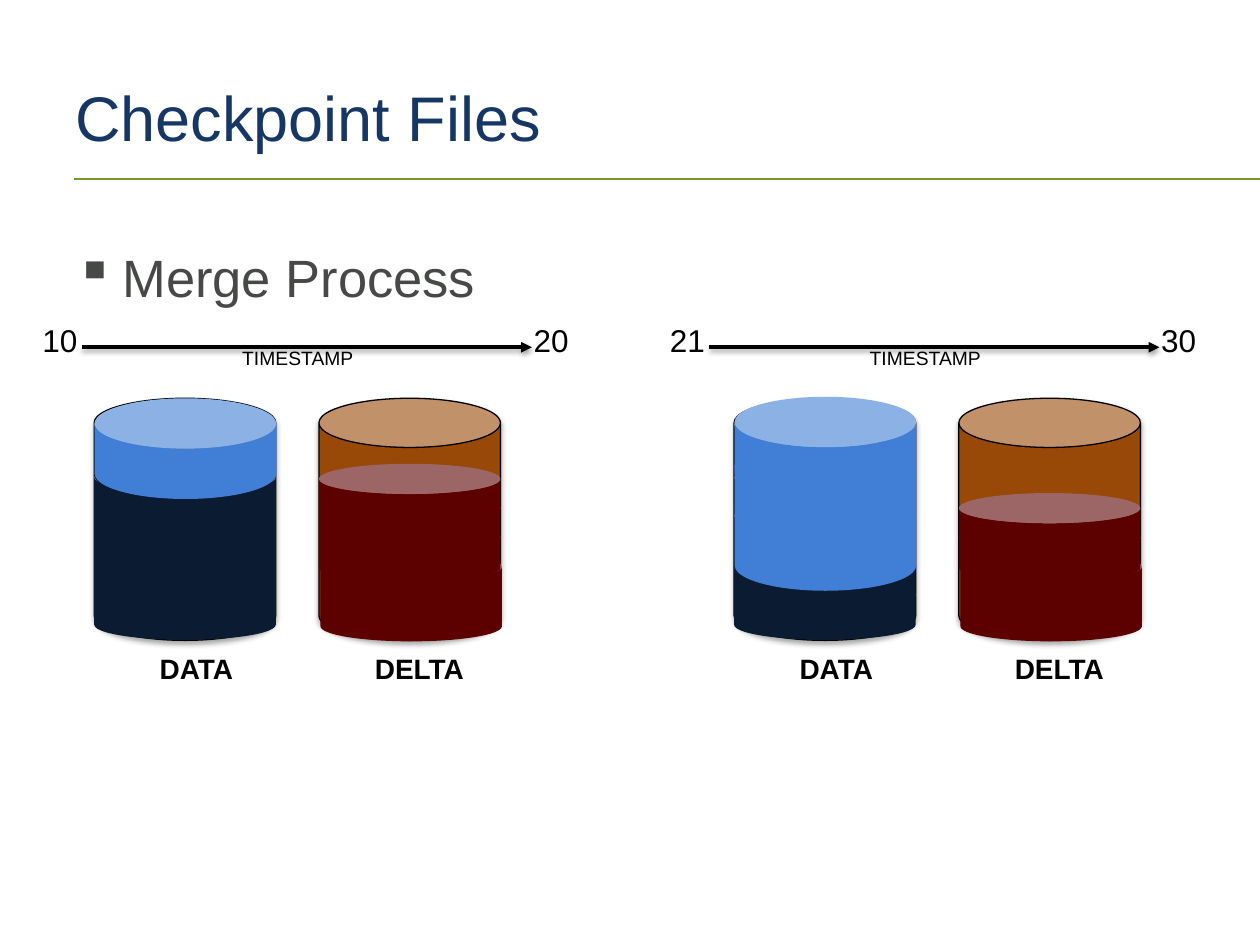
from dataclasses import dataclass

from lxml import etree
from pptx import Presentation
from pptx.dml.color import RGBColor
from pptx.enum.shapes import MSO_CONNECTOR, MSO_SHAPE
from pptx.enum.text import MSO_ANCHOR, MSO_AUTO_SIZE, PP_ALIGN
from pptx.oxml.ns import qn
from pptx.util import Cm, Pt

CAN = MSO_SHAPE.CAN
LINE = MSO_CONNECTOR.STRAIGHT
LEFT, CENTER = PP_ALIGN.LEFT, PP_ALIGN.CENTER
TOP, MIDDLE = MSO_ANCHOR.TOP, MSO_ANCHOR.MIDDLE
GROW, FIXED = MSO_AUTO_SIZE.SHAPE_TO_FIT_TEXT, MSO_AUTO_SIZE.NONE


@dataclass(frozen=True)
class Theme:
    font: str = "Arial"
    title: str = "163764"
    body: str = "474947"
    black: str = "000000"
    rule: str = "75982F"
    green: str = "587223"
    brown: str = "984807"
    navy: str = "0B1B32"
    red: str = "5C0000"
    blue: str = "407FD5"
    title_size: int = 36
    body_size: int = 30
    mark_size: int = 18
    label_size: int = 16
    axis_size: int = 11


theme = Theme()


def write(text, shapes, box, size, color=theme.black, bold=False, align=CENTER,
          anchor=TOP, inset=(0.61, 0.48), spacing=0.9, after=7.3, wrap=True,
          fit=GROW, bullet=None):
    """Add a text box; box and inset are in centimetres."""
    frame = shapes.add_textbox(*map(Cm, box)).text_frame
    frame.word_wrap = wrap
    frame.auto_size = fit
    frame.vertical_anchor = anchor
    frame.margin_left = frame.margin_right = Cm(inset[0])
    frame.margin_top = frame.margin_bottom = Cm(inset[1])
    par = frame.paragraphs[0]
    par.alignment = align
    par.line_spacing = spacing
    par.space_after = Pt(after)
    if bullet:
        props = par._p.get_or_add_pPr()
        props.set("marL", str(Cm(0.95)))
        props.set("indent", str(-Cm(0.95)))
        etree.SubElement(props, qn("a:buChar"), char=bullet)
    run = par.add_run()
    run.text = text
    run.font.name = theme.font
    run.font.size = Pt(size)
    run.font.bold = bold
    run.font.color.rgb = RGBColor.from_string(color)


def shade(item, alpha=0, dist=0):
    """Replace theme effects by a soft shadow below, or by none if alpha is 0."""
    effects = etree.SubElement(item._element.spPr, qn("a:effectLst"))
    if alpha:
        shadow = etree.SubElement(
            effects, qn("a:outerShdw"), blurRad=str(Pt(3.1)),
            dist=str(Pt(dist)), dir="5400000", rotWithShape="0")
        tint = etree.SubElement(shadow, qn("a:srgbClr"), val=theme.black)
        etree.SubElement(tint, qn("a:alpha"), val=str(alpha * 1000))


deck = Presentation()
deck.slide_width, deck.slide_height = Cm(25.4), Cm(19.05)
slide = deck.slides.add_slide(deck.slide_layouts[6])

# Heading
rule = slide.shapes.add_connector(LINE, Cm(1.5), Cm(3.61), Cm(25.4), Cm(3.61))
rule.line.color.rgb = RGBColor.from_string(theme.rule)
rule.line.width = Pt(1)
shade(rule)
plain = dict(align=LEFT, inset=(0.25, 0.13), after=0, fit=FIXED)
write("Checkpoint Files", slide.shapes, (1.27, 0.76, 22.86, 3.18),
      theme.title_size, theme.title, anchor=MIDDLE, spacing=1, **plain)
write("Merge Process", slide.shapes, (1.27, 4.55, 22.86, 12.5),
      theme.body_size, theme.body, spacing=1.2, bullet="▪", **plain)

# File pairs: range start and end, offsets of cans and axis,
# count of delta slices, tops of the blue slices
pairs = [
    ("10", "20", 0, 0, 5, [8.03]),
    ("21", "30", 12.9, 12.65, 4, [9.88, 8.89, 8.0]),
]
step, thin, thick = 0.59, 1.22, 2.03
for start, end, shift, slide_x, count, blues in pairs:
    group = slide.shapes.add_group_shape().shapes
    data, delta = 1.9 + shift, 6.43 + shift

    # Each can: left, top, height, curve, fill, outlined
    shells = [(data, 8.03, 4.88, 0.271, theme.green, True),
              (delta, 8.03, 4.88, 0.271, theme.brown, True)]
    slices = [(data, 11.68 - step * i, thin, 0.5, theme.navy, False)
              for i in range(5)]
    slices.append((data, 8.05, thick, 0.5, theme.navy, False))
    slices += [(delta + (0.03 if i < 2 else 0), 11.71 - step * i, thin, 0.5,
                theme.red, False) for i in range(count)]
    slices += [(data + 0.01, top, thick, 0.5, theme.blue, False)
               for top in blues]
    for left, top, high, curve, fill, outlined in shells + slices:
        can = group.add_shape(CAN, Cm(left), Cm(top), Cm(3.66), Cm(high))
        can.adjustments[0] = curve
        can.fill.solid()
        can.fill.fore_color.rgb = RGBColor.from_string(fill)
        if outlined:
            can.line.color.rgb = RGBColor.from_string(theme.black)
            can.line.width = Pt(0.75)
            shade(can, 35, 1.8)
        else:
            can.line.fill.background()
            shade(can)

    for name, left, wide in [("DATA", data + 0.69, 2.74),
                             ("DELTA", delta + 0.5, 3.05)]:
        write(name, group, (left, 12.9, wide, 1.6), theme.label_size,
              bold=True, wrap=False)

    arrow = slide.shapes.add_connector(
        LINE, Cm(1.65 + slide_x), Cm(7.0), Cm(10.72 + slide_x), Cm(7.0))
    arrow.line.color.rgb = RGBColor.from_string(theme.black)
    arrow.line.width = Pt(2)
    etree.SubElement(arrow.line._get_or_add_ln(), qn("a:tailEnd"),
                     type="triangle")
    shade(arrow, 38, 1.6)
    write("TIMESTAMP", slide.shapes, (3.91 + slide_x, 6.83, 4.19, 1.45),
          theme.axis_size)
    for mark, left in [(start, 0.23), (end, 10.13)]:
        write(mark, slide.shapes, (left + slide_x, 6.22, 1.96, 1.68),
              theme.mark_size)

deck.save("out.pptx")
